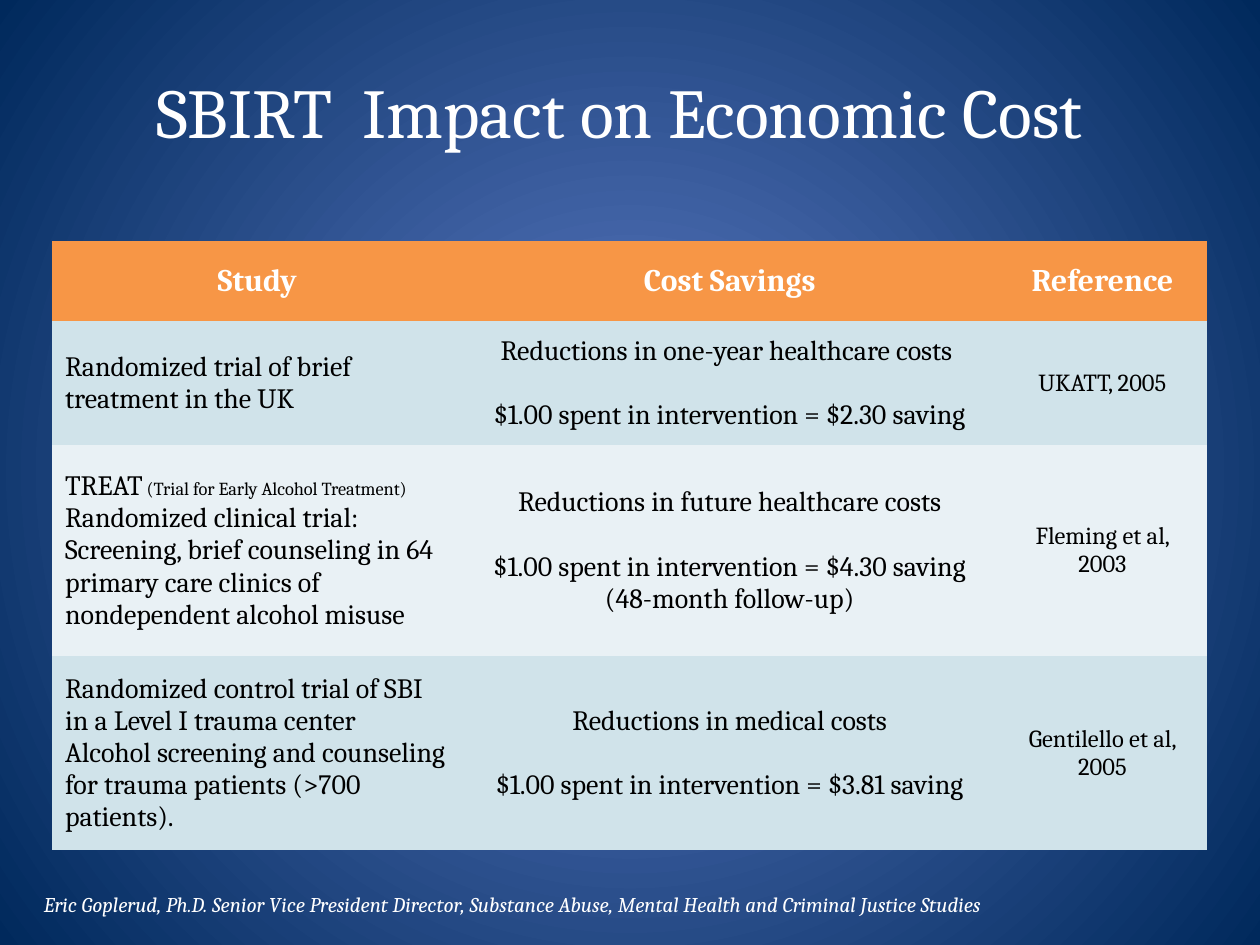
from dataclasses import dataclass

from lxml import etree
from pptx import Presentation
from pptx import util as u
from pptx.dml.color import RGBColor
from pptx.enum import text
from pptx.oxml.ns import qn

Pt = u.Pt


@dataclass(frozen=True)
class Theme:
    font: str = "Cambria"
    glow: str = "5E7CC5"
    edge: str = "00295C"
    light: str = "FFFFFF"
    dark: str = "000000"
    header: str = "F79646"
    bands: tuple = ("D0E3EA", "E9F1F5")
    title_size: float = 40
    header_size: float = 18
    body_size: float = 16
    reference_size: float = 14
    credit_size: float = 12
    aside_size: float = 10.5
    finding_gap: float = 18.5


THEME = Theme()
LEFT, CENTER = text.PP_ALIGN.LEFT, text.PP_ALIGN.CENTER

COLUMN_WIDTHS = (234, 306, 120)
ROW_HEIGHTS = (45.5, 71, 120.5, 111)
HEADINGS = ("Study", "Cost Savings", "Reference")
ASIDE = " (Trial for Early Alcohol Treatment) "

# Each study: description paragraphs, savings paragraphs, reference.
# A paragraph given as a tuple holds (text, size) runs.
STUDIES = (
    (["Randomized trial of brief treatment in the UK"],
     ["Reductions in one-year healthcare costs ",
      "$1.00 spent in intervention = $2.30 saving"],
     "UKATT, 2005"),
    ([(("TREAT", THEME.body_size), (ASIDE, THEME.aside_size),
       ("Randomized clinical trial:", THEME.body_size)),
      "Screening, brief counseling in 64 primary care clinics of "
      "nondependent alcohol misuse"],
     ["Reductions in future healthcare costs",
      "$1.00 spent in intervention = $4.30 saving",
      "(48-month follow-up)"],
     "Fleming et al, 2003"),
    (["Randomized control trial of SBI in a Level I trauma center",
      "Alcohol screening and counseling for trauma patients (>700 patients)."],
     ["Reductions in medical costs",
      "$1.00 spent in intervention = $3.81 saving"],
     "Gentilello et al, 2005"),
)


def color(value):
    return RGBColor.from_string(value)


def style(paragraph, size, ink, align=LEFT, bold=False, italic=False):
    paragraph.alignment = align
    font = paragraph.font
    font.name, font.size, font.color.rgb = THEME.font, Pt(size), color(ink)
    font.bold, font.italic = bold, italic


def paint_background(slide):
    fill = slide.background.fill
    fill.gradient()
    for stop, value in zip(fill.gradient_stops, (THEME.glow, THEME.edge)):
        stop.color.rgb = color(value)
    # Turn the linear gradient into a circle around the slide centre
    gradient = slide.element.find(".//" + qn("a:gradFill"))
    linear = gradient.find(qn("a:lin"))
    circle = etree.Element(qn("a:path"), {"path": "circle"})
    etree.SubElement(circle, qn("a:fillToRect"),
                     {side: "50000" for side in "ltrb"})
    gradient.replace(linear, circle)


def place_title(slide, left, top, width, height):
    title = slide.shapes.title
    title.left, title.top = Pt(left), Pt(top)
    title.width, title.height = Pt(width), Pt(height)
    frame = title.text_frame
    frame.text = "SBIRT  Impact on Economic Cost"
    frame.vertical_anchor = text.MSO_ANCHOR.MIDDLE
    style(frame.paragraphs[0], THEME.title_size, THEME.light, CENTER)


def fill_cell(cell, paragraphs, fill, size, ink=THEME.dark, align=CENTER,
              bold=False, gap=0):
    """Write the paragraphs; gap is the space after the first one."""
    cell.fill.solid()
    cell.fill.fore_color.rgb = color(fill)
    cell.vertical_anchor = text.MSO_ANCHOR.MIDDLE
    frame = cell.text_frame
    for index, content in enumerate(paragraphs):
        paragraph = frame.add_paragraph() if index else frame.paragraphs[0]
        style(paragraph, size, ink, align, bold)
        if index == 1 and gap:
            paragraph.space_before = Pt(gap)
        runs = ((content, None),) if isinstance(content, str) else content
        for words, run_size in runs:
            run = paragraph.add_run()
            run.text = words
            if run_size:
                run.font.size = Pt(run_size)


def place_study_table(slide, left, top):
    frame = slide.shapes.add_table(
        len(ROW_HEIGHTS), len(COLUMN_WIDTHS), Pt(left), Pt(top),
        Pt(sum(COLUMN_WIDTHS)), Pt(sum(ROW_HEIGHTS)))
    table = frame.table
    for column, width in zip(table.columns, COLUMN_WIDTHS):
        column.width = Pt(width)
    for row, height in zip(table.rows, ROW_HEIGHTS):
        row.height = Pt(height)

    # Remove the style's white cell borders
    table_style = frame._element.find(".//" + qn("a:tableStyleId"))
    table_style.text = "{2D5ABB26-0587-4C30-8999-92F81FD0307C}"

    for index, heading in enumerate(HEADINGS):
        fill_cell(table.cell(0, index), [heading], THEME.header,
                  THEME.header_size, THEME.light, bold=True)
    for row, (study, savings, reference) in enumerate(STUDIES, start=1):
        band = THEME.bands[(row - 1) % 2]
        fill_cell(table.cell(row, 0), study, band, THEME.body_size, align=LEFT)
        fill_cell(table.cell(row, 1), savings, band, THEME.body_size,
                  gap=THEME.finding_gap)
        fill_cell(table.cell(row, 2), [reference], band, THEME.reference_size)


def place_credit(slide, left, top, width, height):
    box = slide.shapes.add_textbox(Pt(left), Pt(top), Pt(width), Pt(height))
    frame = box.text_frame
    frame.word_wrap = True
    frame.text = ("Eric Goplerud, Ph.D. Senior Vice President Director, "
                  "Substance Abuse, Mental Health and Criminal Justice Studies")
    style(frame.paragraphs[0], THEME.credit_size, THEME.light, italic=True)


def main():
    presentation = Presentation()
    presentation.slide_width, presentation.slide_height = Pt(720), Pt(540)
    title_only = presentation.slide_layouts[5]
    slide = presentation.slides.add_slide(title_only)
    paint_background(slide)
    place_title(slide, 30, 18, 648, 90)
    place_study_table(slide, 30, 138)
    place_credit(slide, 18, 506, 660, 22)
    presentation.save("out.pptx")


if __name__ == "__main__":
    main()
